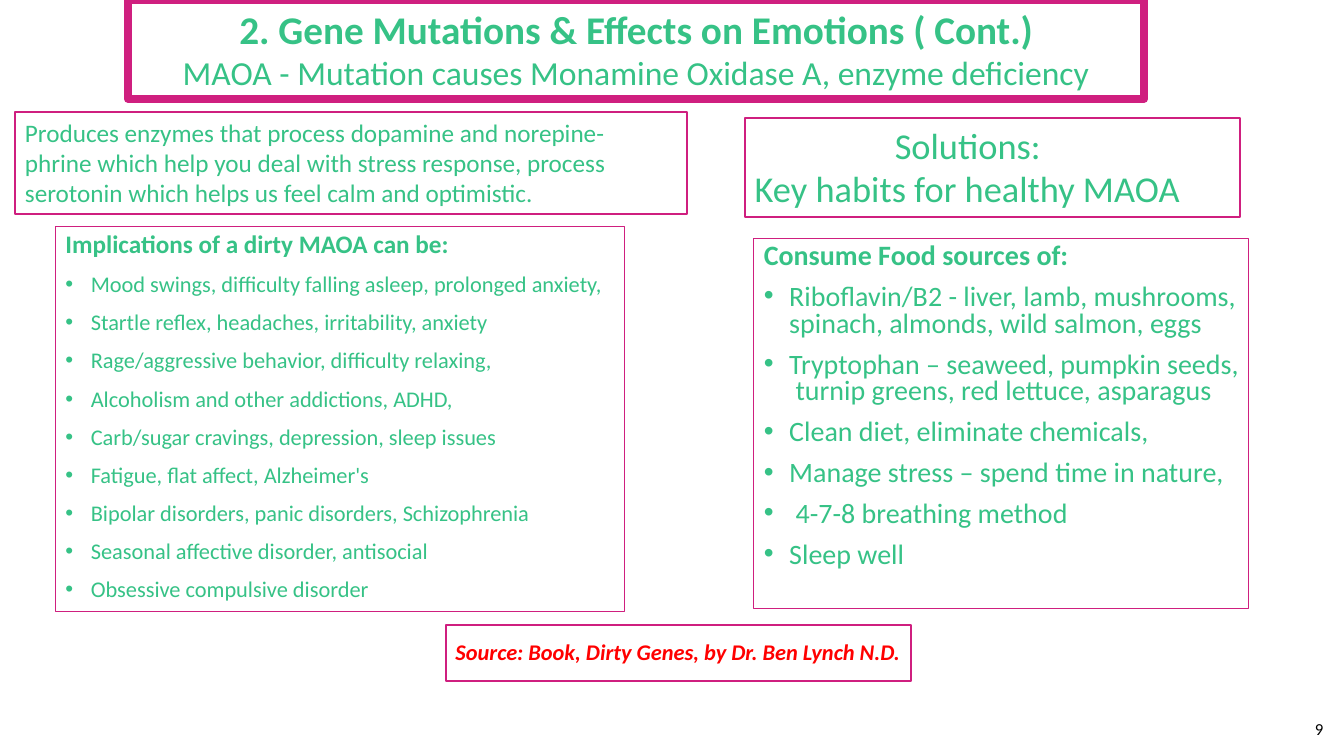
from lxml.etree import SubElement
from pptx import Presentation
from pptx.dml.color import RGBColor
from pptx.enum.shapes import MSO_SHAPE
from pptx.enum.text import MSO_ANCHOR, PP_ALIGN
from pptx.oxml.ns import qn
from pptx.util import Cm, Pt

GREEN = "36C286"
PINK = "CF1F7F"
RED = "FF0000"
BLACK = "000000"

IMPLICATIONS = [
    "Mood swings, difficulty falling asleep, prolonged anxiety,",
    "Startle reflex, headaches, irritability, anxiety",
    "Rage/aggressive behavior, difficulty relaxing,",
    "Alcoholism and other addictions, ADHD,",
    "Carb/sugar cravings, depression, sleep issues",
    "Fatigue, flat affect, Alzheimer's",
    "Bipolar disorders, panic disorders, Schizophrenia",
    "Seasonal affective disorder, antisocial",
    "Obsessive compulsive disorder",
]
HABITS = [
    "Riboflavin/B2 - liver, lamb, mushrooms, spinach, almonds, wild salmon, eggs",
    "Tryptophan – seaweed, pumpkin seeds,\v turnip greens, red lettuce, asparagus",
    "Clean diet, eliminate chemicals,",
    "Manage stress – spend time in nature,",
    " 4-7-8 breathing method",
    "Sleep well",
]


def color(value):
    return RGBColor.from_string(value)


def add_frame(slide, x, y, w, h, line=1.5, anchor=MSO_ANCHOR.TOP):
    sp = slide.shapes.add_shape(MSO_SHAPE.RECTANGLE, Cm(x), Cm(y), Cm(w), Cm(h))
    sp.shadow.inherit = False
    sp.fill.background()
    sp.line.color.rgb = color(PINK)
    sp.line.width = Pt(line)
    tf = sp.text_frame
    tf.word_wrap = True
    tf.vertical_anchor = anchor
    return tf


def add_text(tf, text, size, fill=GREEN, bold=False, italic=False,
             align=PP_ALIGN.LEFT, spacing=1.0, before=0, indent=0, bullet=False):
    p = tf.paragraphs[0] if not tf.text else tf.add_paragraph()
    p.text = text
    p.alignment = align
    p.line_spacing = spacing
    p.space_before = Pt(before)
    pPr = p._p.get_or_add_pPr()
    pPr.set("marL", str(Cm(indent)))
    if bullet:
        pPr.set("indent", str(-Cm(indent)))
        SubElement(pPr, qn("a:buFont"), typeface="Arial")
        SubElement(pPr, qn("a:buChar"), char="•")
    for r in p.runs:
        r.font.name = "Calibri"
        r.font.size = Pt(size)
        r.font.bold = bold
        r.font.italic = italic
        r.font.color.rgb = color(fill)


def add_title(slide, x, y, w, h):
    tf = add_frame(slide, x, y, w, h, line=6)
    add_text(tf, "2. Gene Mutations & Effects on Emotions ( Cont.)", 28,
             bold=True, align=PP_ALIGN.CENTER)
    add_text(tf, "MAOA - Mutation causes Monamine Oxidase A, enzyme deficiency",
             24, align=PP_ALIGN.CENTER)


def add_summary(slide, x, y, w, h):
    tf = add_frame(slide, x, y, w, h)
    add_text(tf, "Produces enzymes that process dopamine and norepine-", 18)
    add_text(tf, "phrine which help you deal with stress response, process "
                 "serotonin which helps us feel calm and optimistic.", 18)


def add_solutions(slide, x, y, w, h):
    tf = add_frame(slide, x, y, w, h)
    add_text(tf, "Solutions:", 26, indent=3.53)
    add_text(tf, "Key habits for healthy MAOA", 26)


def add_list(slide, x, y, w, h, heading, items, heading_size, size, spacing):
    tf = add_frame(slide, x, y, w, h, line=0.75)
    tf.margin_right = Cm(0.2)
    add_text(tf, heading, heading_size, bold=True, spacing=spacing)
    for item in items:
        add_text(tf, item, size, spacing=spacing, before=10, indent=0.64, bullet=True)


def add_source(slide, x, y, w, h):
    tf = add_frame(slide, x, y, w, h, anchor=MSO_ANCHOR.MIDDLE)
    add_text(tf, "Source: Book, Dirty Genes, by Dr. Ben Lynch N.D.", 16,
             fill=RED, bold=True, italic=True, spacing=0.9)


def add_page_number(slide, x, y, w, h):
    tf = slide.shapes.add_textbox(Cm(x), Cm(y), Cm(w), Cm(h)).text_frame
    tf.word_wrap = True
    tf.vertical_anchor = MSO_ANCHOR.MIDDLE
    add_text(tf, "9", 12, fill=BLACK, align=PP_ALIGN.RIGHT)


def main():
    prs = Presentation()
    prs.slide_width, prs.slide_height = Cm(33.87), Cm(19.05)
    s = prs.slides.add_slide(prs.slide_layouts[6])
    add_title(s, 3.23, 0, 25.6, 2.49)
    add_solutions(s, 18.77, 2.97, 12.47, 2.49)
    add_list(s, 1.4, 5.72, 14.33, 9.68, "Implications of a dirty MAOA can be:",
             IMPLICATIONS, 18, 16, 0.9)
    add_list(s, 19, 6.02, 12.47, 9.32, "Consume Food sources of:",
             HABITS, 20, 20, 0.8)
    add_source(s, 11.23, 15.75, 11.73, 1.42)
    add_summary(s, 0.38, 2.82, 16.94, 2.57)
    add_page_number(s, 31.9, 17.98, 1.7, 0.79)
    prs.save("out.pptx")


if __name__ == "__main__":
    main()
